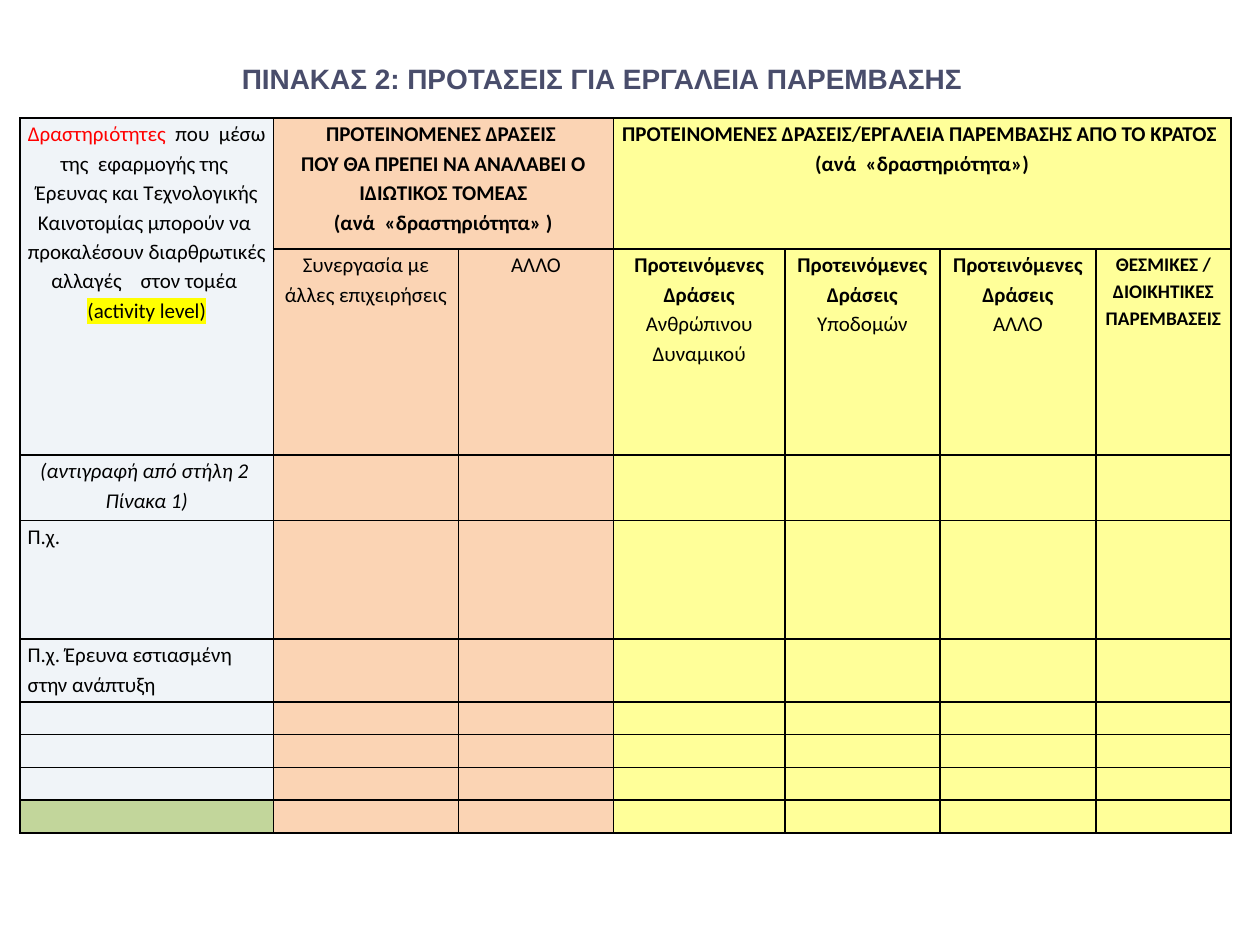
from dataclasses import dataclass
from typing import Any

from lxml import etree
from pptx import Presentation
from pptx.dml.color import RGBColor
from pptx.enum.text import PP_ALIGN
from pptx.oxml.ns import qn
from pptx.util import Inches, Pt

CENTER, LEFT = PP_ALIGN.CENTER, PP_ALIGN.LEFT
BLACK = RGBColor(0x00, 0x00, 0x00)
RED = RGBColor(0xFF, 0x00, 0x00)
SLATE = RGBColor(0x49, 0x4D, 0x6B)
HIGHLIGHT = RGBColor(0xFF, 0xFF, 0x00)
PALE_BLUE = RGBColor(0xEA, 0xF0, 0xF6)
PEACH = RGBColor(0xFB, 0xD4, 0xB4)
YELLOW = RGBColor(0xFF, 0xFF, 0x99)
GREEN = RGBColor(0xC2, 0xD6, 0x9B)

COLUMNS = [2.01, 1.47, 1.23, 1.36, 1.23, 1.24, 1.07]
ROWS = [1.04, 1.61, 0.52, 0.94, 0.5] + [0.26] * 4
COLUMN_FILLS = [PALE_BLUE] + [PEACH] * 2 + [YELLOW] * 4
MERGES = [(0, 0, 1, 0), (0, 1, 0, 2), (0, 3, 0, 6)]
BOLD = {"bold": True}
PROPOSED = [("Προτεινόμενες Δράσεις", BOLD)]
CELL_TEXTS = {
    (0, 0): [
        [("Δραστηριότητες ", {"color": RED}),
         (" που  μέσω της  εφαρμογής της  Έρευνας και Τεχνολογικής Καινοτομίας μπορούν να  "
          "προκαλέσουν διαρθρωτικές αλλαγές    στον τομέα ", {})],
        [("(activity level)", {"highlight": HIGHLIGHT})],
    ],
    (0, 1): [
        [("ΠΡΟΤΕΙΝΟΜΕΝΕΣ ΔΡΑΣΕΙΣ ", BOLD)],
        [("ΠΟΥ ΘΑ ΠΡΕΠΕΙ ΝΑ ΑΝΑΛΑΒΕΙ Ο ΙΔΙΩΤΙΚΟΣ ΤΟΜΕΑΣ", BOLD)],
        [("(ανά  «δραστηριότητα» )", BOLD)],
    ],
    (0, 3): [
        [("ΠΡΟΤΕΙΝΟΜΕΝΕΣ ΔΡΑΣΕΙΣ/ΕΡΓΑΛΕΙΑ ΠΑΡΕΜΒΑΣΗΣ ΑΠΟ ΤΟ ΚΡΑΤΟΣ ", BOLD)],
        [("(ανά  «δραστηριότητα»)", BOLD)],
    ],
    (1, 1): [[("Συνεργασία με άλλες επιχειρήσεις", {})]],
    (1, 2): [[("ΑΛΛΟ", {})]],
    (1, 3): [PROPOSED, [("Ανθρώπινου Δυναμικού", {})]],
    (1, 4): [PROPOSED, [("Υποδομών", {})]],
    (1, 5): [PROPOSED, [("ΑΛΛΟ", {})]],
    (1, 6): [[("ΘΕΣΜΙΚΕΣ / ΔΙΟΙΚΗΤΙΚΕΣ ΠΑΡΕΜΒΑΣΕΙΣ", {"bold": True, "size": 11})]],
    (2, 0): [[("(αντιγραφή από στήλη 2  Πίνακα 1)", {"italic": True})]],
    (3, 0): [[("Π.χ.", {})]],
    (4, 0): [[("Π.χ. Έρευνα εστιασμένη στην ανάπτυξη", {})]],
}


@dataclass
class SlideBuilder:
    """Draws styled elements on one slide, placed by shares of its size."""

    presentation: Any
    slide: Any
    body_font: str = "Calibri"
    title_font: str = "Arial"
    body_size: int = 12
    line_spacing: float = 1.15
    inset: float = 0.06

    def place(self, left, top, width, height):
        slide_width, slide_height = self.presentation.slide_width, self.presentation.slide_height
        return (int(left * slide_width), int(top * slide_height),
                int(width * slide_width), int(height * slide_height))

    def add_run(self, paragraph, text, font, size, color=BLACK, bold=False, italic=False,
                highlight=None):
        run = paragraph.add_run()
        run.text = text
        run.font.size, run.font.bold, run.font.italic = Pt(size), bold, italic
        run.font.color.rgb = color
        if highlight is not None:
            properties = run.font._element
            marker = etree.Element(qn("a:highlight"))
            etree.SubElement(marker, qn("a:srgbClr"), val=str(highlight))
            properties.find(qn("a:solidFill")).addnext(marker)
        run.font.name = font

    def add_title(self, text, *shares):
        text_frame = self.slide.shapes.add_textbox(*self.place(*shares)).text_frame
        text_frame.word_wrap = True
        paragraph = text_frame.paragraphs[0]
        paragraph.alignment = CENTER
        self.add_run(paragraph, text, self.title_font, 16, SLATE, bold=True)

    def add_table(self, columns, rows, *shares):
        left, top, width, height = self.place(*shares)
        table = self.slide.shapes.add_table(
            len(rows), len(columns), left, top, width, height).table
        table.first_row = table.horz_banding = False
        for column, share in zip(table.columns, columns):
            column.width = int(width * share / sum(columns))
        for row, share in zip(table.rows, rows):
            row.height = int(height * share / sum(rows))
        return table

    def style_cell(self, cell, fill, opacity=None):
        cell.margin_left = cell.margin_right = Inches(self.inset)
        cell.margin_top = cell.margin_bottom = 0
        properties = cell._tc.get_or_add_tcPr()
        for side in ("a:lnL", "a:lnR", "a:lnT", "a:lnB"):
            line = etree.SubElement(properties, qn(side), w=str(Pt(1)))
            line_fill = etree.SubElement(line, qn("a:solidFill"))
            etree.SubElement(line_fill, qn("a:srgbClr"), val=str(BLACK))
        cell.fill.solid()
        cell.fill.fore_color.rgb = fill
        if opacity is not None:
            color = properties.find(qn("a:solidFill")).find(qn("a:srgbClr"))
            etree.SubElement(color, qn("a:alpha"), val=str(opacity * 1000))

    def fill_cell(self, cell, paragraphs, alignment):
        text_frame = cell.text_frame
        for index, runs in enumerate(paragraphs or [[]]):
            paragraph = text_frame.add_paragraph() if index else text_frame.paragraphs[0]
            paragraph.alignment = alignment
            paragraph.line_spacing = self.line_spacing
            for text, style in runs:
                self.add_run(paragraph, text, self.body_font,
                             **{"size": self.body_size, **style})
            if not runs:
                etree.SubElement(paragraph._p, qn("a:endParaRPr"), sz=str(self.body_size * 100))


def main():
    presentation = Presentation()
    presentation.slide_width, presentation.slide_height = Inches(10), Inches(7.5)
    slide = presentation.slides.add_slide(presentation.slide_layouts[6])
    builder = SlideBuilder(presentation, slide)

    table = builder.add_table(COLUMNS, ROWS, 0.016, 0.125, 0.961, 0.753)
    last_row = len(ROWS) - 1
    for row in range(len(ROWS)):
        for column, column_fill in enumerate(COLUMN_FILLS):
            cell = table.cell(row, column)
            fill = GREEN if (row, column) == (last_row, 0) else column_fill
            builder.style_cell(cell, fill, 70 if fill == PALE_BLUE else None)
            alignment = CENTER if row < 3 else LEFT
            builder.fill_cell(cell, CELL_TEXTS.get((row, column)), alignment)
    for top, left, bottom, right in MERGES:
        table.cell(top, left).merge(table.cell(bottom, right))

    builder.add_title("ΠΙΝΑΚΑΣ 2: ΠΡΟΤΑΣΕΙΣ ΓΙΑ ΕΡΓΑΛΕΙΑ ΠΑΡΕΜΒΑΣΗΣ ", 0.028, 0.059, 0.906, 0.049)
    presentation.save("out.pptx")


if __name__ == "__main__":
    main()
